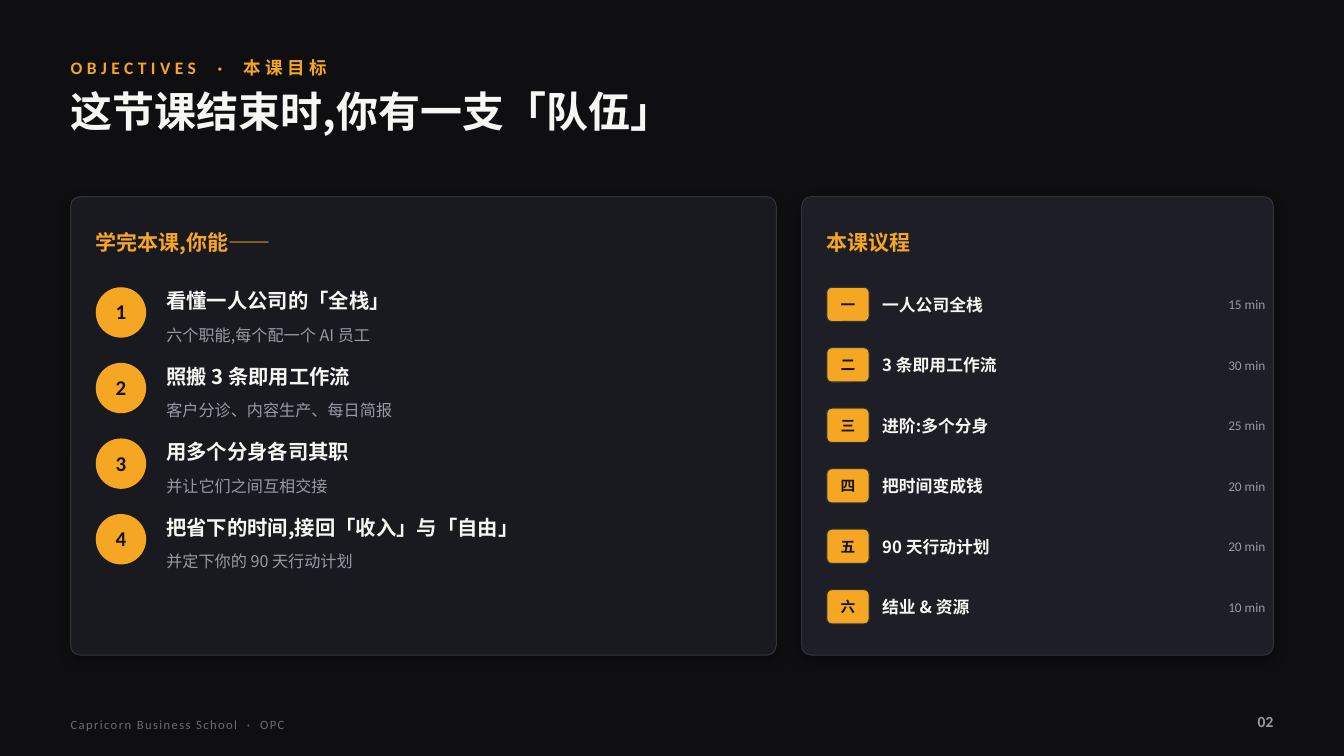
from lxml import etree
from pptx import Presentation
from pptx import util as u
from pptx.dml.color import RGBColor
from pptx.enum import shapes, text as t
from pptx.oxml.ns import qn

KICKER = ("OBJECTIVES", "本课目标")
TITLE = "这节课结束时,你有一支「队伍」"
GOALS_HEADING = "学完本课,你能——"
GOALS = [
    ("看懂一人公司的「全栈」", "六个职能,每个配一个 AI 员工"),
    ("照搬 3 条即用工作流", "客户分诊、内容生产、每日简报"),
    ("用多个分身各司其职", "并让它们之间互相交接"),
    ("把省下的时间,接回「收入」与「自由」", "并定下你的 90 天行动计划"),
]
AGENDA_HEADING = "本课议程"
AGENDA = [
    ("一", "一人公司全栈", "15 min"),
    ("二", "3 条即用工作流", "30 min"),
    ("三", "进阶:多个分身", "25 min"),
    ("四", "把时间变成钱", "20 min"),
    ("五", "90 天行动计划", "20 min"),
    ("六", "结业 & 资源", "10 min"),
]
FOOTER = ("Capricorn Business School", "OPC")
PAGE = "02"

BACKGROUND = RGBColor(0x0F, 0x0F, 0x12)
GOALS_FILL = RGBColor(0x19, 0x19, 0x20)
AGENDA_FILL = RGBColor(0x1E, 0x1E, 0x26)
BORDER = RGBColor(0x33, 0x33, 0x3E)
AMBER = RGBColor(0xF5, 0xA6, 0x23)
WHITE = RGBColor(0xF6, 0xF6, 0xF3)
GREY = RGBColor(0x9A, 0x9A, 0xA6)
DIM = RGBColor(0x6B, 0x6B, 0x76)
INK = RGBColor(0x14, 0x14, 0x10)
LATIN, CJK = "Calibri", "Noto Sans CJK SC"
LEFT, CENTER, RIGHT = t.PP_ALIGN.LEFT, t.PP_ALIGN.CENTER, t.PP_ALIGN.RIGHT
TOP, MIDDLE = t.MSO_ANCHOR.TOP, t.MSO_ANCHOR.MIDDLE

PX = 9144  # 100 px to the inch
MARGIN, CARD_TOP, CARD_HEIGHT, PADDING = 70, 195, 455, 25
GOALS_WIDTH, AGENDA_LEFT, AGENDA_WIDTH = 700, 795, 468
ROWS_TOP, GOAL_STEP, AGENDA_STEP = 285, 75, 60

prs = Presentation()
prs.slide_width, prs.slide_height = 1333 * PX, 750 * PX
slide = prs.slides.add_slide(prs.slide_layouts[5])
slide.background.fill.solid()
slide.background.fill.fore_color.rgb = BACKGROUND


def text(content, x, y, w, h, *, size, color, font=CJK, bold=False,
         align=LEFT, anchor=MIDDLE, spacing=0, holder=None):
    """Write a string, or a tuple of parts set apart by widely spaced dots."""
    box = holder or slide.shapes.add_textbox(0, 0, 0, 0)
    box.left, box.top, box.width, box.height = (v * PX for v in (x, y, w, h))
    frame = box.text_frame
    frame.auto_size, frame.word_wrap = t.MSO_AUTO_SIZE.NONE, True
    frame.vertical_anchor = anchor
    frame.margin_left = frame.margin_right = 0
    frame.margin_top = frame.margin_bottom = 0
    paragraph = frame.paragraphs[0]
    paragraph.alignment = align
    gap = 2 * spacing + 0.226 * size
    runs = [(content, spacing)]
    if isinstance(content, tuple):
        runs = [(content[0], spacing)]
        for part in content[1:]:
            runs += [(" ", gap), ("·", spacing), (" ", gap), (part, spacing)]
    for words, tracking in runs:
        run = paragraph.add_run()
        run.text = words
        run.font.size, run.font.bold, run.font.name = u.Pt(size), bold, font
        run.font.color.rgb = color
        props = run.font._element
        etree.SubElement(props, qn("a:ea")).set("typeface", CJK)
        if tracking:
            props.set("spc", str(round(tracking * 100)))


def block(kind, x, y, w, h, fill, *, radius=None, border=None):
    shape = slide.shapes.add_shape(kind, *(v * PX for v in (x, y, w, h)))
    shape.shadow.inherit = False
    shape.fill.solid()
    shape.fill.fore_color.rgb = fill
    if radius:
        shape.adjustments[0] = radius / min(w, h)
    if border:
        shape.line.color.rgb, shape.line.width = border, u.Pt(0.75)
    else:
        shape.line.fill.background()
    return shape


def card(x, width, fill, heading, heading_width):
    panel = block(shapes.MSO_SHAPE.ROUNDED_RECTANGLE, x, CARD_TOP, width,
                  CARD_HEIGHT, fill, radius=10, border=BORDER)
    effects = panel._element.spPr.find(qn("a:effectLst"))
    shadow = etree.SubElement(effects, qn("a:outerShdw"), blurRad=str(u.Pt(9)),
                              dist=str(u.Pt(3)), dir="5400000", rotWithShape="0")
    black = etree.SubElement(shadow, qn("a:srgbClr"), val="000000")
    etree.SubElement(black, qn("a:alpha"), val="34000")
    text(heading, x + PADDING, CARD_TOP + PADDING, heading_width, 40,
         size=15, color=AMBER, bold=True)


text(KICKER, MARGIN, 52, 1193, 30, size=12.5, color=AMBER, font=LATIN,
     bold=True, spacing=3.2)
text(TITLE, MARGIN, 85, 1193, 90, size=30, color=WHITE, bold=True,
     anchor=TOP, holder=slide.shapes.title)

card(MARGIN, GOALS_WIDTH, GOALS_FILL, GOALS_HEADING, 650)
badge_x = MARGIN + PADDING
for i, (goal, detail) in enumerate(GOALS):
    y = ROWS_TOP + i * GOAL_STEP
    block(shapes.MSO_SHAPE.OVAL, badge_x, y, 50, 50, AMBER)
    text(str(i + 1), badge_x, y - 1, 50, 50, size=15, color=INK, font=LATIN,
         bold=True, align=CENTER)
    text(goal, badge_x + 70, y - 4, 580, 34, size=14.5, color=WHITE, bold=True)
    text(detail, badge_x + 70, y + 30, 580, 34, size=11.5, color=GREY)

card(AGENDA_LEFT, AGENDA_WIDTH, AGENDA_FILL, AGENDA_HEADING, 400)
chip_x = AGENDA_LEFT + PADDING
for i, (numeral, topic, duration) in enumerate(AGENDA):
    y = ROWS_TOP + i * AGENDA_STEP
    block(shapes.MSO_SHAPE.ROUNDED_RECTANGLE, chip_x, y, 42, 34, AMBER,
          radius=5, border=BORDER)
    text(numeral, chip_x, y, 42, 34, size=10.5, color=INK, bold=True, align=CENTER)
    text(topic, chip_x + 55, y - 4, 300, 42, size=12, color=WHITE, bold=True)
    text(duration, chip_x + 350, y - 4, 85, 42, size=9.5, color=GREY,
         font=LATIN, align=RIGHT)

text(FOOTER, MARGIN, 704, 700, 30, size=9, color=DIM, font=LATIN, spacing=1)
text(PAGE, 1183, 700, 80, 32, size=11, color=GREY, font=LATIN, bold=True, align=RIGHT)

prs.save("out.pptx")
